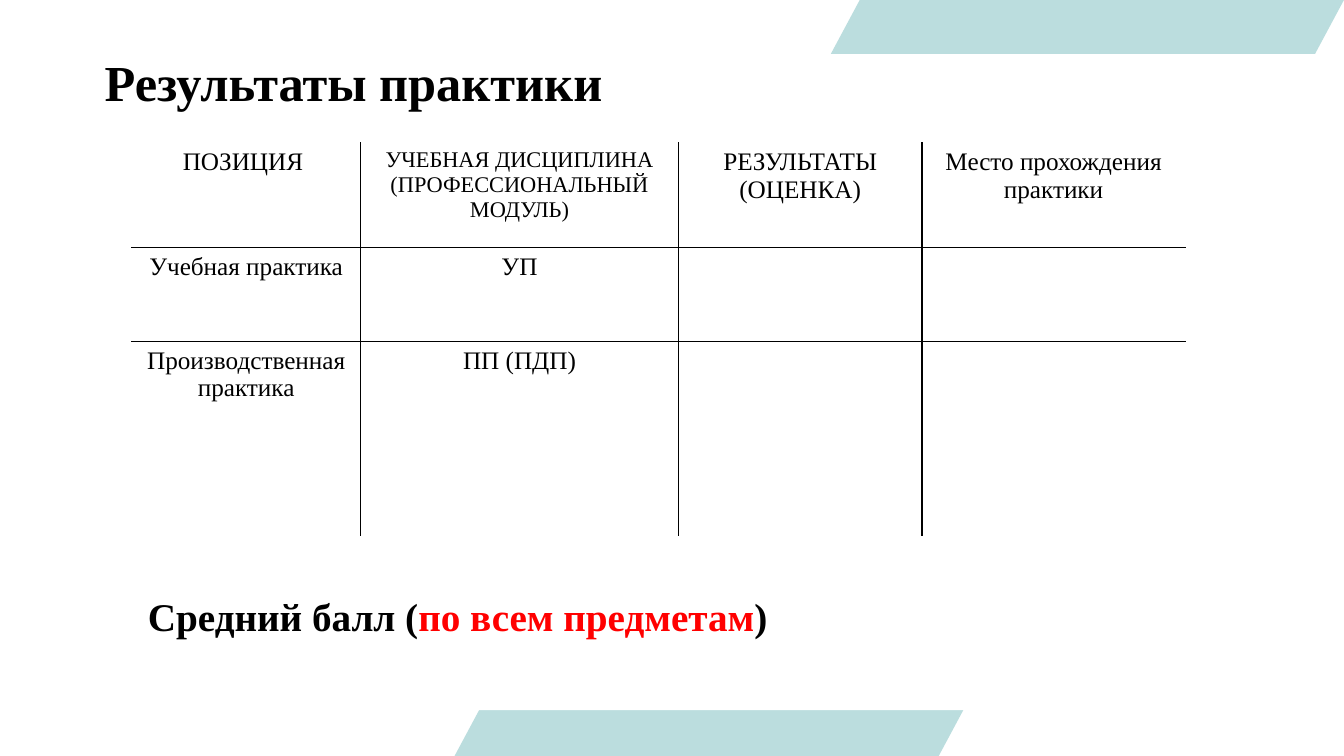
import pptx
import pptx.util
import pptx.dml.color
import pptx.enum.shapes
import pptx.enum.text
import pptx.oxml
import pptx.oxml.ns

Pt = pptx.util.Pt
SHAPE = pptx.enum.shapes.MSO_SHAPE
ALIGN = pptx.enum.text.PP_ALIGN
ANCHOR = pptx.enum.text.MSO_ANCHOR
COLORS = {"band": "BBDDDE", "paper": "FFFFFF", "ink": "000000", "accent": "FF0000"}


class Page:
    """Holds the style and the current slide; lengths are in points."""

    font = "Times New Roman"

    def __init__(self, slide):
        self.slide = slide

    def rgb(self, color):
        return pptx.dml.color.RGBColor.from_string(COLORS[color])

    def style(self, run, size, color="ink", bold=False):
        run.font.name = self.font
        run.font.size = Pt(size)
        run.font.bold = bold
        run.font.color.rgb = self.rgb(color)

    def shape(self, kind, box, color):
        shape = self.slide.shapes.add_shape(kind, *map(Pt, box))
        shape.shadow.inherit = False
        shape.fill.solid()
        shape.fill.fore_color.rgb = self.rgb(color)
        shape.line.fill.background()
        return shape

    def text(self, box, parts, size, anchor=ANCHOR.TOP, spacing=1.0):
        frame = self.slide.shapes.add_textbox(*map(Pt, box)).text_frame
        frame.word_wrap = True
        frame.vertical_anchor = anchor
        para = frame.paragraphs[0]
        para.line_spacing = spacing
        for words, color in parts:
            run = para.add_run()
            run.text = words
            self.style(run, size, color, bold=True)

    def border(self, cell, sides):
        props = cell._tc.get_or_add_tcPr()
        for place, (side, color) in enumerate(sides.items()):
            line = pptx.oxml.parse_xml(
                f'<a:ln{side} {pptx.oxml.ns.nsdecls("a")} w="{Pt(1)}"><a:solidFill>'
                f'<a:srgbClr val="{COLORS[color]}"/></a:solidFill></a:ln{side}>')
            props.insert(place, line)

    def table(self, left, top, widths, heights, rows, sizes):
        frame = self.slide.shapes.add_table(
            len(heights), len(widths), Pt(left), Pt(top),
            Pt(sum(widths)), Pt(sum(heights)))
        table = frame.table
        table.first_row = table.horz_banding = False
        for col, width in zip(table.columns, widths):
            col.width = Pt(width)
        for row, height in zip(table.rows, heights):
            row.height = Pt(height)
        last_row, last_col = len(heights) - 1, len(widths) - 1
        for r, row in enumerate(rows):
            for c, words in enumerate(row):
                cell = table.cell(r, c)
                cell.fill.solid()
                cell.fill.fore_color.rgb = self.rgb("paper")
                # Inner lines are dark, the outer frame is white
                outer = {"L": c == 0, "R": c == last_col,
                         "T": r == 0, "B": r == last_row}
                self.border(cell, {side: "paper" if edge else "ink"
                                   for side, edge in outer.items()})
                if words:
                    cell.text_frame.text = words
                    para = cell.text_frame.paragraphs[0]
                    para.alignment = ALIGN.CENTER
                    self.style(para.runs[0], sizes.get((r, c), 18))


def main():
    deck = pptx.Presentation()
    deck.slide_width, deck.slide_height = Pt(960), Pt(540)
    page = Page(deck.slides.add_slide(deck.slide_layouts[6]))

    # Slanted band, with its middle covered
    band = page.shape(SHAPE.PARALLELOGRAM, (324.7, 0, 635.3, 540), "band")
    band.adjustments[0] = 0.536
    page.shape(SHAPE.RECTANGLE, (0, 38.6, 960, 468.7), "paper")

    # Title
    page.text((67.7, 29.5, 828.7, 62.6), [("Результаты практики", "ink")], 36,
              ANCHOR.MIDDLE, 0.9)

    # Results table
    rows = [
        ["ПОЗИЦИЯ ", "УЧЕБНАЯ ДИСЦИПЛИНА (ПРОФЕССИОНАЛЬНЫЙ МОДУЛЬ)",
         "РЕЗУЛЬТАТЫ (ОЦЕНКА)", "Место прохождения практики"],
        ["Учебная практика", "УП", "", ""],
        ["Производственная практика", "ПП (ПДП)", "", ""],
    ]
    page.table(94.1, 102, [163.5, 227, 174, 188], [75, 67, 139.5], rows,
               {(0, 1): 16})

    # Average mark
    page.text((98.6, 419.8, 712, 41),
              [("Средний балл (", "ink"), ("по всем предметам", "accent"),
               (")", "ink")], 28)

    deck.save("out.pptx")


if __name__ == "__main__":
    main()
